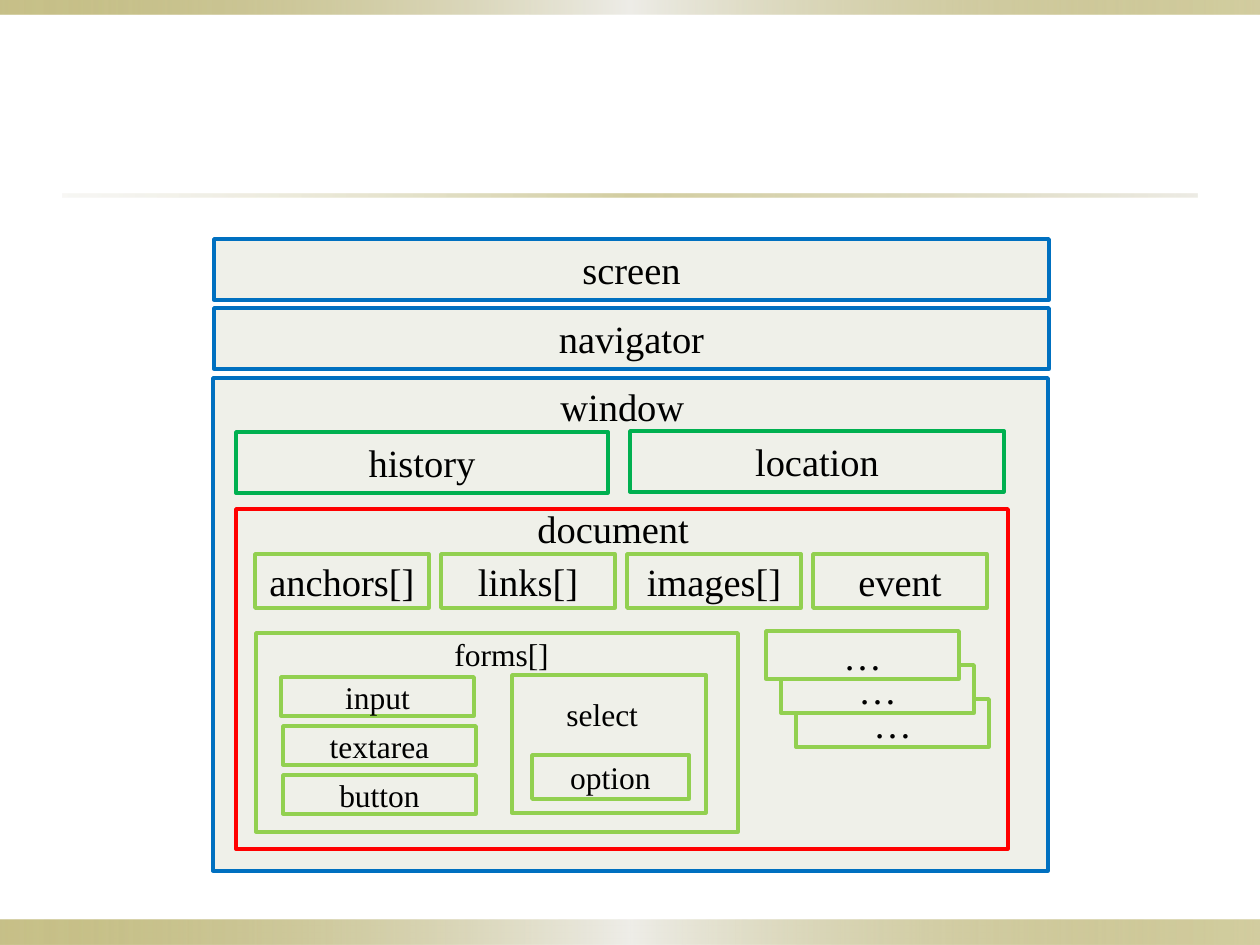
from lxml.etree import SubElement
from pptx import Presentation
from pptx.dml.color import RGBColor
from pptx.enum.shapes import MSO_SHAPE as Preset
from pptx.enum.text import MSO_ANCHOR as Anchor, MSO_AUTO_SIZE as AutoSize, PP_ALIGN as Align
from pptx.oxml.ns import qn
from pptx.util import Pt

EMU_PER_PX = 914400 / 126
BLUE, GREEN, RED, LIME = "0070C0", "00B050", "FF0000", "92D050"
BAND_STOPS = [(0, "918415", 50), (50, "EEEDE8", 100), (100, "918415", 40)]
RULE_STOPS = [(0, "DCD9CC", 20), (50, "918415", 40), (100, "DCD9CC", 50)]


def px(*lengths):
    return [round(length * EMU_PER_PX) for length in lengths]


def color(hex_code):
    return RGBColor.from_string(hex_code)


def write(frame, text, size=22, align=Align.LEFT, anchor=Anchor.TOP, wrap=True):
    frame.word_wrap = wrap
    frame.vertical_anchor = anchor
    paragraph = frame.paragraphs[0]
    paragraph.alignment = align
    run = paragraph.add_run()
    run.text = text
    run.font.name = "Times New Roman"
    run.font.size = Pt(size)
    run.font.color.rgb = color("000000")


class ObjectModelSlide:
    """Draws nested object boxes in one style on the current slide."""

    panel_fill = "EFF0E9"
    border_width = Pt(2)

    def __init__(self, slide):
        self.shapes = slide.shapes

    def rectangle(self, *place):
        rectangle = self.shapes.add_shape(Preset.RECTANGLE, *px(*place))
        rectangle.shadow.inherit = False
        return rectangle

    def band(self, *place, stops):
        band = self.rectangle(*place)
        band.line.fill.background()
        band.fill.gradient()
        band.fill.gradient_angle = 0
        stop_list = band.fill._fill._gradFill.find(qn("a:gsLst"))
        for default_stop in list(stop_list):
            stop_list.remove(default_stop)
        for position, hex_code, opacity in stops:
            stop = SubElement(stop_list, qn("a:gs"), pos=str(position * 1000))
            tint = SubElement(stop, qn("a:srgbClr"), val=hex_code)
            SubElement(tint, qn("a:alpha"), val=str(opacity * 1000))

    def box(self, *place, border, text=None, size=22):
        box = self.rectangle(*place)
        box.fill.solid()
        box.fill.fore_color.rgb = color(self.panel_fill)
        box.line.color.rgb = color(border)
        box.line.width = self.border_width
        if text:
            write(box.text_frame, text, size=size, align=Align.CENTER, anchor=Anchor.MIDDLE)

    def label(self, *place, text, size=22, wrap=True):
        frame = self.shapes.add_textbox(*px(*place)).text_frame
        frame.auto_size = AutoSize.SHAPE_TO_FIT_TEXT
        write(frame, text, size=size, wrap=wrap)


def main():
    deck = Presentation()
    deck.slide_width, deck.slide_height = px(1260, 945)
    model = ObjectModelSlide(deck.slides.add_slide(deck.slide_layouts[6]))

    model.band(0, 920, 1260, 25, stops=BAND_STOPS)
    model.band(0, 0, 1260, 15, stops=BAND_STOPS)
    model.band(63, 194, 1134, 3, stops=RULE_STOPS)

    model.box(214, 239, 835, 61, border=BLUE, text="screen")
    model.box(214, 308, 835, 61, border=BLUE, text="navigator")
    model.box(213, 378, 835, 493, border=BLUE)
    model.label(548, 377, 168, 59, text="window")
    model.box(236, 432, 372, 61, border=GREEN, text="history")
    model.box(630, 431, 374, 61, border=GREEN, text="location")

    model.box(236, 509, 772, 340, border=RED)
    model.label(525, 499, 214, 59, text="document")
    for column, member in enumerate(["anchors[]", "links[]", "images[]", "event"]):
        model.box(255 + 186 * column, 554, 174, 54, border=LIME, text=member)

    model.box(256, 633, 482, 199, border=LIME)
    model.label(442, 629, 122, 50, text="forms[]", size=18, wrap=False)
    for row, (left, control) in enumerate([(281, "input"), (283, "textarea"), (283, "button")]):
        model.box(left, 677 + 49 * row, 193, 39, border=LIME, text=control, size=18)
    model.box(512, 675, 194, 138, border=LIME)
    model.label(554, 689, 98, 50, text="select", size=18, wrap=False)
    model.box(532, 755, 157, 44, border=LIME, text="option", size=18)

    for depth in (2, 1, 0):
        model.box(766 + 15 * depth, 631 + 34 * depth, 193, 48, border=LIME, text="…")

    deck.save("out.pptx")


if __name__ == "__main__":
    main()
